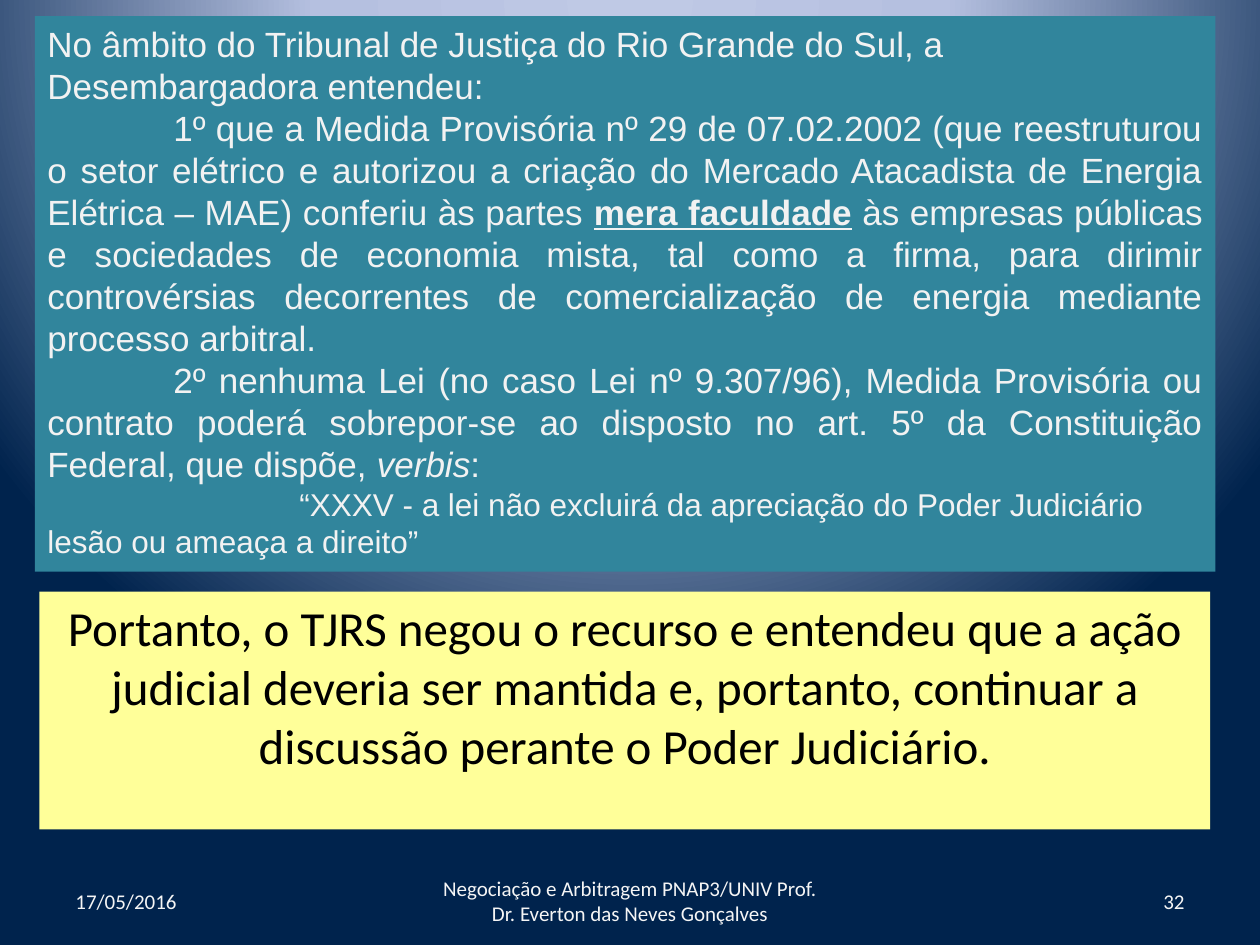
from dataclasses import dataclass

from pptx import Presentation
from pptx.dml.color import RGBColor
from pptx.enum.shapes import MSO_SHAPE
from pptx.enum.text import MSO_ANCHOR, MSO_AUTO_SIZE, PP_ALIGN
from pptx.oxml import parse_xml
from pptx.oxml.ns import nsdecls, qn
from pptx.util import Pt


@dataclass(frozen=True)
class Theme:
    panel: str = "31859C"
    panel_text: str = "F2F2F2"
    conclusion: str = "FFFF99"
    conclusion_text: str = "000000"
    footer_text: str = "F5F5F5"
    body_font: str = "Arial"
    plain_font: str = "Calibri"
    body_size: int = 20
    quote_size: int = 18
    conclusion_size: int = 28
    footer_size: int = 12
    glow: tuple = ((0, "BFC9E5"), (40, "B5C0E0"), (100, "00234D"))


@dataclass(frozen=True)
class Style:
    font: str
    size: int
    color: str


@dataclass(frozen=True)
class Span:
    text: str
    format: tuple = ()


@dataclass(frozen=True)
class Paragraph:
    spans: tuple
    style: Style
    align: PP_ALIGN = PP_ALIGN.LEFT
    indent: float = 0
    space_before: float = 0


@dataclass(frozen=True)
class Footer:
    text: str
    left: float
    width: float
    align: PP_ALIGN


THEME = Theme()
BODY = Style(THEME.body_font, THEME.body_size, THEME.panel_text)
QUOTE = Style(THEME.body_font, THEME.quote_size, THEME.panel_text)
CONCLUSION = Style(THEME.plain_font, THEME.conclusion_size, THEME.conclusion_text)
FOOTER = Style(THEME.plain_font, THEME.footer_size, THEME.footer_text)
TAB = 72

RULING = (
    Paragraph((Span("No âmbito do Tribunal de Justiça do Rio Grande do Sul, a "
                    "Desembargadora entendeu:"),), BODY),
    Paragraph((
        Span("1º que a Medida Provisória nº 29 de 07.02.2002 (que reestruturou o setor "
             "elétrico e autorizou a criação do Mercado Atacadista de Energia Elétrica "
             "– MAE) conferiu às partes "),
        Span("mera faculdade", (("bold", True), ("underline", True))),
        Span(" às empresas públicas e sociedades de economia mista, tal como a firma, "
             "para dirimir controvérsias decorrentes de comercialização de energia "
             "mediante processo arbitral."),
    ), BODY, PP_ALIGN.JUSTIFY, TAB),
    Paragraph((
        Span("2º nenhuma Lei (no caso Lei nº 9.307/96), Medida Provisória ou contrato "
             "poderá sobrepor-se ao disposto no art. 5º da Constituição Federal, que "
             "dispõe, "),
        Span("verbis", (("italic", True),)),
        Span(":"),
    ), BODY, PP_ALIGN.JUSTIFY, TAB),
    Paragraph((Span("“XXXV - a lei não excluirá da apreciação do Poder Judiciário "
                    "lesão ou ameaça a direito”"),), QUOTE, PP_ALIGN.LEFT, 2 * TAB),
)

OUTCOME = (
    Paragraph((Span("Portanto, o TJRS negou o recurso e entendeu que a ação judicial "
                    "deveria ser mantida e, portanto, continuar a discussão perante o "
                    "Poder Judiciário."),),
              CONCLUSION, PP_ALIGN.CENTER, space_before=5.6),
)

FOOTERS = (
    Footer("17/05/2016", 36, 168, PP_ALIGN.LEFT),
    Footer("Negociação e Arbitragem PNAP3/UNIV Prof. Dr. Everton das Neves Gonçalves",
           246, 228, PP_ALIGN.CENTER),
    Footer("32", 516, 168, PP_ALIGN.RIGHT),
)


def paint_background(page) -> None:
    stops = "".join(
        f'<a:gs pos="{position * 1000}"><a:srgbClr val="{color}"/></a:gs>'
        for position, color in THEME.glow)
    background = parse_xml(
        f'<p:bg {nsdecls("p", "a")}><p:bgPr><a:gradFill rotWithShape="1">'
        f'<a:gsLst>{stops}</a:gsLst><a:path path="circle">'
        '<a:fillToRect l="50000" t="-80000" r="50000" b="180000"/></a:path>'
        '</a:gradFill><a:effectLst/></p:bgPr></p:bg>')
    page.element.find(qn("p:cSld")).insert(0, background)


def place(box, left: float, top: float, width: float, height: float) -> None:
    frame = {"left": left, "top": top, "width": width, "height": height}
    for name, value in frame.items():
        setattr(box, name, Pt(value))


def fill_box(box, color: str) -> None:
    box.fill.solid()
    box.fill.fore_color.rgb = RGBColor.from_string(color)
    box.line.fill.background()


def write(box, paragraphs: tuple, anchor: MSO_ANCHOR = MSO_ANCHOR.TOP) -> None:
    frame = box.text_frame
    settings = {"word_wrap": True, "auto_size": MSO_AUTO_SIZE.NONE,
                "vertical_anchor": anchor}
    for name, value in settings.items():
        setattr(frame, name, value)
    for index, paragraph in enumerate(paragraphs):
        para = frame.add_paragraph() if index else frame.paragraphs[0]
        para.alignment = paragraph.align
        para.space_before = Pt(paragraph.space_before)
        if paragraph.indent:
            para._p.get_or_add_pPr().set("indent", str(Pt(paragraph.indent)))
        style = paragraph.style
        for item in paragraph.spans:
            span = para.add_run()
            span.text = item.text
            span.font.color.rgb = RGBColor.from_string(style.color)
            formats = {"name": style.font, "size": Pt(style.size), **dict(item.format)}
            for name, value in formats.items():
                setattr(span.font, name, value)


def main() -> None:
    deck = Presentation()
    deck.slide_width, deck.slide_height = Pt(720), Pt(540)
    # The slide has a subtitle but no title
    page = deck.slides.add_slide(deck.slide_layouts[0])
    title = page.shapes.title.element
    title.getparent().remove(title)
    paint_background(page)

    # Ruling panel
    panel = page.shapes.add_shape(MSO_SHAPE.RECTANGLE, 0, 0, 0, 0)
    panel.shadow.inherit = False
    place(panel, 20, 9.2, 674.6, 317.5)
    fill_box(panel, THEME.panel)
    write(panel, RULING)

    # Conclusion
    conclusion = page.placeholders[1]
    place(conclusion, 22.5, 338, 669, 136)
    fill_box(conclusion, THEME.conclusion)
    write(conclusion, OUTCOME)

    # Date, course and page number
    for footer in FOOTERS:
        box = page.shapes.add_textbox(0, 0, 0, 0)
        place(box, footer.left, 500.5, footer.width, 28.75)
        write(box, (Paragraph((Span(footer.text),), FOOTER, footer.align),),
              MSO_ANCHOR.MIDDLE)

    deck.save("out.pptx")


if __name__ == "__main__":
    main()
